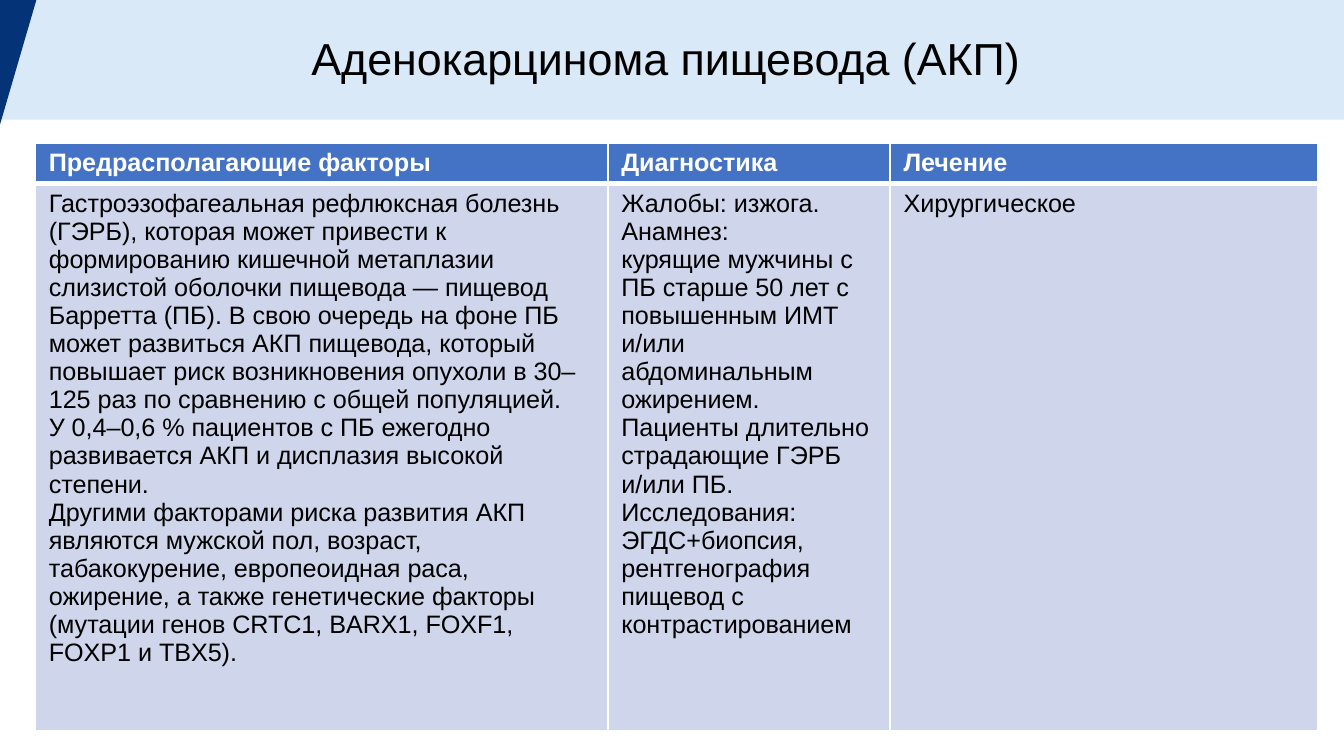
"""Build a slide on oesophageal adenocarcinoma with a title band and a summary table."""
from dataclasses import dataclass

from lxml import etree
from pptx import Presentation
from pptx.dml.color import RGBColor
from pptx.enum import shapes, text
from pptx.oxml.ns import qn
from pptx.util import Pt

FONT = "Arial"
WHITE, BLACK, NAVY, BAND = "FFFFFF", "000000", "043377", "D9E9F7"


@dataclass
class Column:
    width: float
    heading: str
    paragraphs: list[str]


@dataclass
class RowStyle:
    height: float
    fill: str
    color: str
    bold: bool
    borders: dict[str, float]


COLUMNS = [
    Column(306.7, "Предрасполагающие факторы", [
        "Гастроэзофагеальная рефлюксная болезнь (ГЭРБ), которая может привести к "
        "формированию кишечной метаплазии слизистой оболочки пищевода — пищевод "
        "Барретта (ПБ). В свою очередь на фоне ПБ может развиться АКП пищевода, который "
        "повышает риск возникновения опухоли в 30–125 раз по сравнению с общей популяцией.",
        "У 0,4–0,6 % пациентов с ПБ ежегодно развивается АКП и дисплазия высокой степени.",
        "Другими факторами риска развития АКП являются мужской пол, возраст, "
        "табакокурение, европеоидная раса, ожирение, а также генетические факторы "
        "(мутации генов CRTC1, BARX1, FOXF1, FOXP1 и TBX5).",
    ]),
    Column(151.2, "Диагностика", [
        "Жалобы: изжога.",
        "Анамнез:",
        "курящие мужчины с ПБ старше 50 лет с повышенным ИМТ и/или абдоминальным ожирением.",
        "Пациенты длительно страдающие ГЭРБ и/или ПБ.",
        "Исследования: ЭГДС+биопсия, рентгенография пищевод с контрастированием",
    ]),
    Column(229, "Лечение", ["Хирургическое"]),
]
HEADER = RowStyle(21.8, "4472C4", WHITE, True, {"L": 1, "R": 1, "T": 1, "B": 3})
BODY = RowStyle(293, "CFD5EA", BLACK, False, {"L": 1, "R": 1, "T": 3, "B": 1})


def rgb(value: str) -> RGBColor:
    return RGBColor.from_string(value)


def paint(sp, color: str) -> None:
    sp.fill.solid()
    sp.fill.fore_color.rgb = rgb(color)
    sp.line.fill.background()
    sp.shadow.inherit = False


def add_run(p, content: str, size: float, color: str, bold: bool = False) -> None:
    r = p.add_run()
    r.text = content
    r.font.name = FONT
    r.font.size = Pt(size)
    r.font.bold = bold
    r.font.color.rgb = rgb(color)


def add_title(s, content: str) -> None:
    sp = s.shapes.add_shape(shapes.MSO_SHAPE.RECTANGLE, Pt(0), Pt(-2.9), Pt(720), Pt(67))
    paint(sp, BAND)
    tf = sp.text_frame
    tf.word_wrap = True
    tf.vertical_anchor = text.MSO_ANCHOR.MIDDLE
    p = tf.paragraphs[0]
    p.alignment = text.PP_ALIGN.CENTER
    add_run(p, content, 24, BLACK)


def add_corner(s) -> None:
    builder = s.shapes.build_freeform(Pt(0), Pt(0))
    builder.add_line_segments([(Pt(19.5), Pt(0)), (Pt(0), Pt(66.8))], close=True)
    paint(builder.convert_to_shape(), NAVY)


def set_borders(cell, widths: dict[str, float]) -> None:
    props = cell._tc.get_or_add_tcPr()
    for i, (side, width) in enumerate(widths.items()):
        ln = etree.Element(qn(f"a:ln{side}"), w=str(Pt(width)))
        fill = etree.SubElement(ln, qn("a:solidFill"))
        etree.SubElement(fill, qn("a:srgbClr"), val=WHITE)
        props.insert(i, ln)


def fill_cell(cell, paragraphs: list[str], style: RowStyle) -> None:
    cell.fill.solid()
    cell.fill.fore_color.rgb = rgb(style.fill)
    cell.margin_left = cell.margin_right = Pt(7.2)
    cell.margin_top = cell.margin_bottom = Pt(3.4)
    set_borders(cell, style.borders)
    tf = cell.text_frame
    for i, content in enumerate(paragraphs):
        p = tf.add_paragraph() if i else tf.paragraphs[0]
        add_run(p, content, 13.5, style.color, style.bold)


def add_summary(s, columns: list[Column]) -> None:
    styles = [HEADER, BODY]
    width = sum(c.width for c in columns)
    height = sum(style.height for style in styles)
    table = s.shapes.add_table(
        len(styles), len(columns), Pt(19), Pt(76.6), Pt(width), Pt(height)).table
    for row, style in zip(table.rows, styles):
        row.height = Pt(style.height)
    for i, column in enumerate(columns):
        table.columns[i].width = Pt(column.width)
        fill_cell(table.cell(0, i), [column.heading], HEADER)
        fill_cell(table.cell(1, i), column.paragraphs, BODY)


def main() -> None:
    prs = Presentation()
    prs.slide_width, prs.slide_height = Pt(720), Pt(405)
    s = prs.slides.add_slide(prs.slide_layouts[6])
    add_title(s, "Аденокарцинома пищевода (АКП) ")
    add_corner(s)
    add_summary(s, COLUMNS)
    prs.save("out.pptx")


if __name__ == "__main__":
    main()
